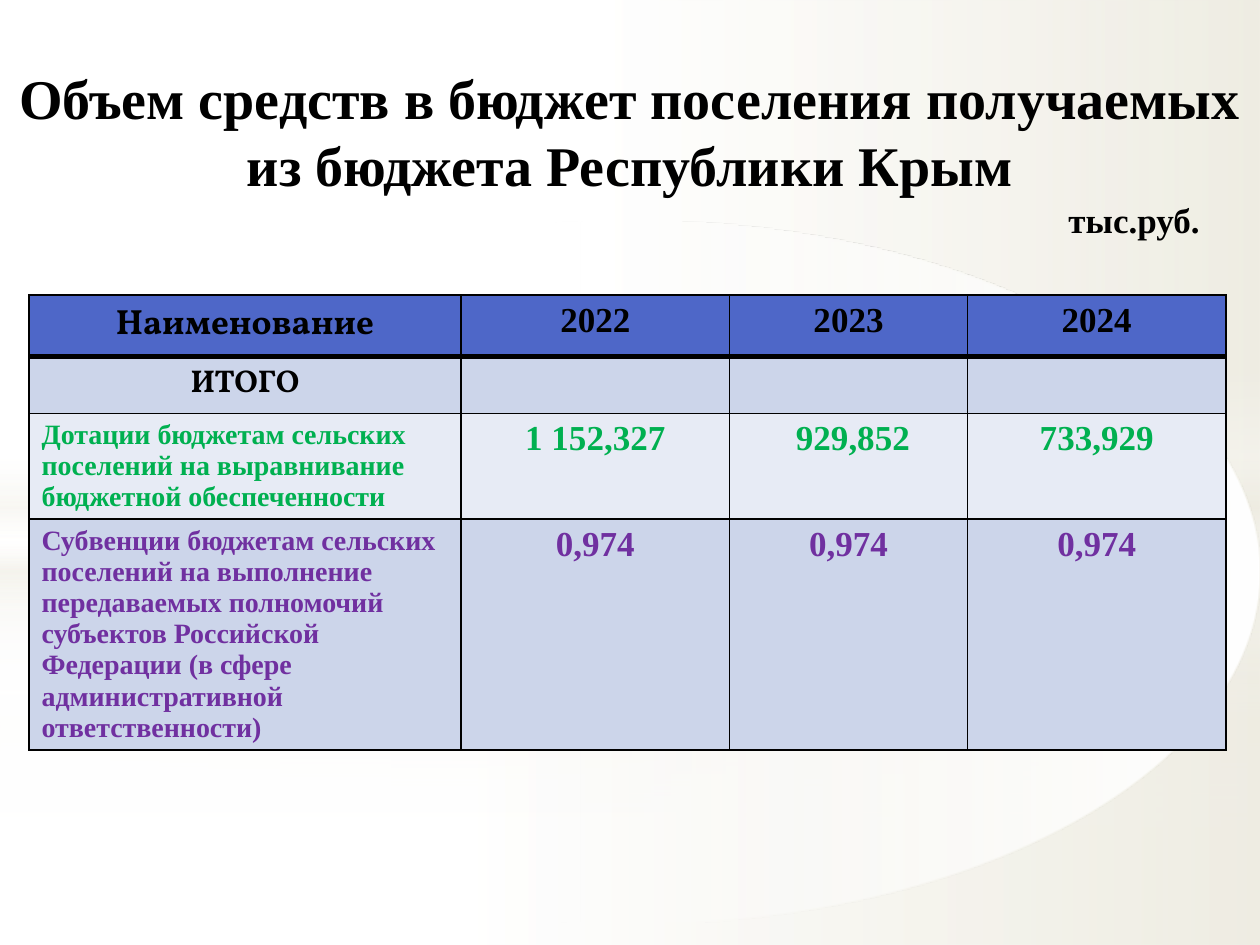
from lxml import etree
from pptx import Presentation
from pptx.dml.color import RGBColor
from pptx.enum.shapes import MSO_SHAPE
from pptx.enum.text import MSO_ANCHOR, MSO_AUTO_SIZE, PP_ALIGN
from pptx.oxml.ns import qn
from pptx.util import Inches, Pt

RECTANGLE, OVAL = MSO_SHAPE.RECTANGLE, MSO_SHAPE.OVAL
LEFT, CENTER = PP_ALIGN.LEFT, PP_ALIGN.CENTER
BLACK = RGBColor(0x00, 0x00, 0x00)
WHITE = RGBColor(0xFF, 0xFF, 0xFF)
CREAM = RGBColor(0xEE, 0xEC, 0xE1)
BLUE = RGBColor(0x4E, 0x67, 0xC8)
BAND_DARK = RGBColor(0xCC, 0xD5, 0xEA)
BAND_LIGHT = RGBColor(0xE7, 0xEB, 0xF5)
GREEN = RGBColor(0x00, 0xB0, 0x50)
PURPLE = RGBColor(0x70, 0x30, 0xA0)
SERIF, HEADING = "Times New Roman", "Vollkorn"


def add_color(parent, color, opacity=100):
    element = etree.SubElement(parent, qn("a:srgbClr"), val=str(color))
    if opacity < 100:
        etree.SubElement(element, qn("a:alpha"), val=str(opacity * 1000))


def write(paragraph, text, alignment, **font_format):
    paragraph.alignment = alignment
    run = paragraph.add_run()
    run.text = text
    color = font_format.pop("color")
    for name, value in font_format.items():
        setattr(run.font, name, value)
    run.font.color.rgb = color


presentation = Presentation()
presentation.slide_width = Inches(10)
presentation.slide_height = Inches(7.5)
slide = presentation.slides.add_slide(presentation.slide_layouts[5])

# Background: two layers of soft gradients, stops are (position, color, opacity)
glow = [(0, WHITE, 0), (29, WHITE, 30), (45, CREAM, 40),
        (55, WHITE, 26), (65, CREAM, 60), (100, WHITE, 0)]
backdrop = [
    (RECTANGLE, 5.58, 1.92, 0, [(0, WHITE, 91), (37, WHITE, 76), (100, CREAM, 79)]),
    (RECTANGLE, 0, 5.58, 0, [(0, WHITE, 89), (48, WHITE, 62), (100, CREAM, 79)]),
    (RECTANGLE, 4.12, 2.5, 90, glow),
    (OVAL, 1.75, 5.58, 180, [(0, WHITE, 100), (56, WHITE, 0)]),
    (RECTANGLE, 4.23, 3.27, 0, [(0, WHITE, 92), (37, WHITE, 77), (100, CREAM, 80)]),
    (RECTANGLE, 0, 4.23, 0, [(0, WHITE, 90), (48, WHITE, 63), (100, CREAM, 80)]),
    (RECTANGLE, 2.9, 2.5, 90, glow),
    (OVAL, 1.75, 5.58, 180, [(0, WHITE, 100), (54, WHITE, 0)]),
]
for kind, top, height, angle, stops in backdrop:
    shape = slide.shapes.add_shape(kind, 0, Inches(top), Inches(10), Inches(height))
    shape.shadow.inherit = False
    shape.line.fill.background()
    shape.fill.gradient()
    gradient = shape.element.spPr.find(qn("a:gradFill"))
    for child in list(gradient):
        gradient.remove(child)
    stop_list = etree.SubElement(gradient, qn("a:gsLst"))
    for position, color, opacity in stops:
        stop = etree.SubElement(stop_list, qn("a:gs"), pos=str(position * 1000))
        add_color(stop, color, opacity)
    etree.SubElement(gradient, qn("a:lin"), ang=str(angle * 60000), scaled="0")

# Budget table
column_widths = [3.43, 2.13, 1.89, 2.05]
row_heights = [0.49, 0.45, 0.84, 1.83]
rows = [
    (["Наименование", "2022", "2023", "2024"], BLUE, BLACK, CENTER, HEADING, 20),
    (["ИТОГО", "", "", ""], BAND_DARK, BLACK, CENTER, HEADING, 18),
    (["Дотации бюджетам сельских поселений на выравнивание бюджетной обеспеченности",
      "1 152,327", " 929,852", "733,929"], BAND_LIGHT, GREEN, LEFT, SERIF, 16),
    (["Субвенции бюджетам сельских поселений на выполнение передаваемых полномочий "
      "субъектов Российской Федерации (в сфере административной ответственности)",
      "0,974", "0,974", "0,974"], BAND_DARK, PURPLE, LEFT, SERIF, 16),
]
table = slide.shapes.add_table(
    len(rows), len(column_widths), Inches(0.23), Inches(2.34),
    Inches(sum(column_widths)), Inches(sum(row_heights))).table
for column, width in zip(table.columns, column_widths):
    column.width = Inches(width)
for row, height in zip(table.rows, row_heights):
    row.height = Inches(height)

for row_index, (texts, fill, color, alignment, name_font, name_size) in enumerate(rows):
    for column_index, text in enumerate(texts):
        cell = table.cell(row_index, column_index)
        is_name = column_index == 0
        if text:
            write(cell.text_frame.paragraphs[0], text, alignment if is_name else CENTER,
                  name=name_font if is_name else SERIF,
                  size=Pt(name_size if is_name else 20), bold=True, color=color)
        properties = cell._tc.get_or_add_tcPr()
        for side in ("L", "R", "T", "B"):
            under_header = (row_index, side) in ((0, "B"), (1, "T"))
            border = etree.SubElement(properties, qn(f"a:ln{side}"),
                                      w=str(Pt(3 if under_header else 0.96)))
            add_color(etree.SubElement(border, qn("a:solidFill")), BLACK)
        cell.fill.solid()
        cell.fill.fore_color.rgb = fill

# Title with the unit of measure, in front of the backdrop
title = slide.shapes.title
title.element.getparent().append(title.element)
title.left, title.top = Inches(0), Inches(0.55)
title.width, title.height = Inches(10), Inches(1.31)
frame = title.text_frame
frame.word_wrap = True
frame.auto_size = MSO_AUTO_SIZE.NONE
frame.vertical_anchor = MSO_ANCHOR.MIDDLE
title_format = {"name": SERIF, "bold": True, "color": BLACK}
write(frame.paragraphs[0],
      "Объем средств в бюджет поселения получаемых из бюджета Республики Крым",
      CENTER, size=Pt(32), **title_format)
unit = frame.add_paragraph()
write(unit, "тыс.руб.", LEFT, size=Pt(20), **title_format)
unit_properties = unit._p.get_or_add_pPr()
unit_properties.set("marL", str(Inches(8.38)))
unit_properties.set("indent", "0")
for paragraph in frame.paragraphs:
    paragraph.space_before = Pt(0)

presentation.save("out.pptx")
